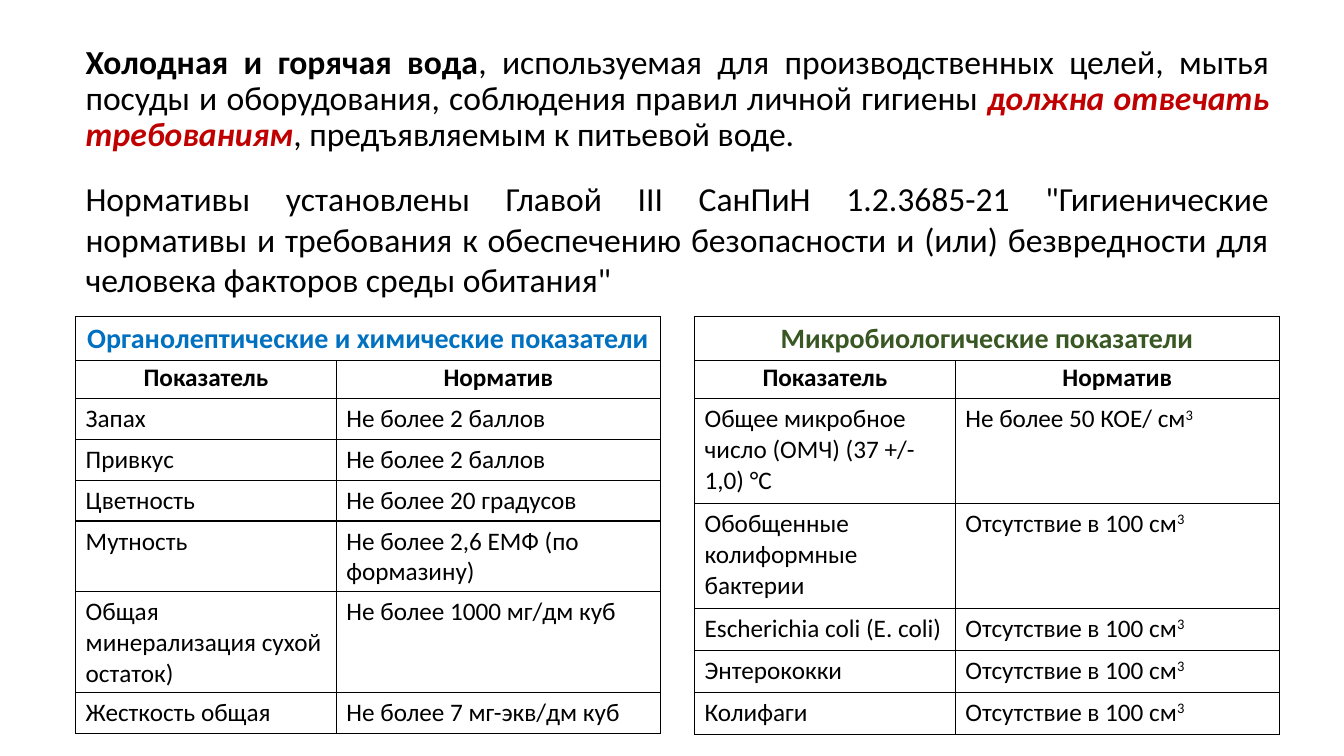
from lxml import etree
from pptx import Presentation
from pptx.dml.color import RGBColor
from pptx.enum.text import PP_ALIGN as Align
from pptx.oxml.ns import qn
from pptx.util import Inches, Pt

BLACK = RGBColor(0x00, 0x00, 0x00)
WHITE = RGBColor(0xFF, 0xFF, 0xFF)
RED = RGBColor(0xC0, 0x00, 0x00)
BLUE = RGBColor(0x00, 0x70, 0xC0)
GREEN = RGBColor(0x38, 0x57, 0x23)
FONT = "Calibri"

SLIDE_W, SLIDE_H = Inches(13.33), Inches(7.5)

# Shares of the slide, in percent
LEFT, CONTENT_W = 5.63, 89.55
NAME_W, NORM_W = 19.4, 24.1
TABLE_W = NAME_W + NORM_W
RIGHT = LEFT + CONTENT_W - TABLE_W
INTRO_TOP, RULES_TOP, TEXT_H = 5.33, 22.93, 17.47
TITLE_TOP, TABLE_TOP = 41.87, 47.33
LINE_ROW, TALL_ROW = 5.4, 13.87

HEADER = ("Показатель", "Норматив")
CHEMICAL = [
    ("Запах", "Не более 2 баллов"),
    ("Привкус", "Не более 2 баллов"),
    ("Цветность", "Не более 20 градусов"),
    ("Мутность", "Не более 2,6 ЕМФ (по формазину)"),
    ("Общая минерализация сухой остаток)", "Не более 1000 мг/дм куб"),
    ("Жесткость общая", "Не более 7 мг-экв/дм куб"),
]
# The part of a text after "^" is raised
ABSENT = "Отсутствие в 100 см^3"
MICROBIAL = [
    ("Общее микробное число (ОМЧ) (37 +/- 1,0) °C", "Не более 50 КОЕ/ см^3"),
    ("Обобщенные колиформные бактерии", ABSENT),
    ("Escherichia coli (E. coli)", ABSENT),
    ("Энтерококки", ABSENT),
    ("Колифаги", ABSENT),
]


def across(percent):
    return round(SLIDE_W * percent / 100)


def down(percent):
    return round(SLIDE_H * percent / 100)


def add_run(p, text, size, color=BLACK, bold=False, italic=False):
    r = p.add_run()
    r.text = text
    font = r.font
    font.name, font.size = FONT, Pt(size)
    font.bold, font.italic = bold, italic
    font.color.rgb = color
    return r


def add_paragraph_box(slide, top, runs, line_spacing=1.0):
    """Add a justified paragraph; runs are (text, style) pairs."""
    box = slide.shapes.add_textbox(
        across(LEFT), down(top), across(CONTENT_W), down(TEXT_H))
    tf = box.text_frame
    tf.word_wrap = True
    p = tf.paragraphs[0]
    p.alignment = Align.JUSTIFY
    p.line_spacing = line_spacing
    for text, style in runs:
        add_run(p, text, 24, **style)


def add_borders(cell):
    tcPr = cell._tc.get_or_add_tcPr()
    for i, side in enumerate(("lnL", "lnR", "lnT", "lnB")):
        ln = etree.Element(qn(f"a:{side}"), w=str(Pt(1)))
        fill = etree.SubElement(ln, qn("a:solidFill"))
        etree.SubElement(fill, qn("a:srgbClr"), val=str(BLACK))
        tcPr.insert(i, ln)


def fill_cell(cell, text, size=18, color=BLACK, heading=False):
    add_borders(cell)
    cell.fill.solid()
    cell.fill.fore_color.rgb = WHITE
    p = cell.text_frame.paragraphs[0]
    p.alignment = Align.CENTER if heading else Align.LEFT
    base, _, raised = text.partition("^")
    add_run(p, base, size, color, heading)
    if raised:
        r = add_run(p, raised, size, color, heading)
        r.font._element.set("baseline", "30000")


def add_grid(slide, left, top, col_widths, row_heights):
    """Add an unstyled table and return it."""
    table = slide.shapes.add_table(
        len(row_heights), len(col_widths), across(left), down(top),
        across(sum(col_widths)), down(sum(row_heights))).table
    table.first_row = table.horz_banding = False
    for col, width in zip(table.columns, col_widths):
        col.width = across(width)
    for row, height in zip(table.rows, row_heights):
        row.height = down(height)
    return table


def add_norms(slide, left, rows, row_heights):
    table = add_grid(slide, left, TABLE_TOP, (NAME_W, NORM_W), row_heights)
    for i, row in enumerate([HEADER] + rows):
        for j, text in enumerate(row):
            fill_cell(table.cell(i, j), text, heading=i == 0)


def add_title(slide, left, text, color):
    table = add_grid(slide, left, TITLE_TOP, (TABLE_W,), (LINE_ROW,))
    fill_cell(table.cell(0, 0), text, 20, color, heading=True)


def main():
    prs = Presentation()
    prs.slide_width, prs.slide_height = SLIDE_W, SLIDE_H
    slide = prs.slides.add_slide(prs.slide_layouts[6])

    add_paragraph_box(slide, INTRO_TOP, [
        ("Холодная и горячая вода", {"bold": True}),
        (", используемая для производственных целей, мытья посуды и "
         "оборудования, соблюдения правил личной гигиены ", {}),
        ("должна отвечать требованиям",
         {"color": RED, "bold": True, "italic": True}),
        (", предъявляемым к питьевой воде.", {}),
    ], line_spacing=0.9)
    add_paragraph_box(slide, RULES_TOP, [
        ('Нормативы установлены Главой III СанПиН 1.2.3685-21 "Гигиенические '
         "нормативы и требования к обеспечению безопасности и (или) "
         'безвредности для человека факторов среды обитания"', {}),
    ])

    add_norms(slide, LEFT, CHEMICAL, [LINE_ROW] * 7)
    add_norms(slide, RIGHT, MICROBIAL,
              [LINE_ROW] + [TALL_ROW] * 2 + [LINE_ROW + 0.15] * 3)
    add_title(slide, LEFT, "Органолептические и химические показатели", BLUE)
    add_title(slide, RIGHT, "Микробиологические показатели", GREEN)

    prs.save("out.pptx")


if __name__ == "__main__":
    main()
